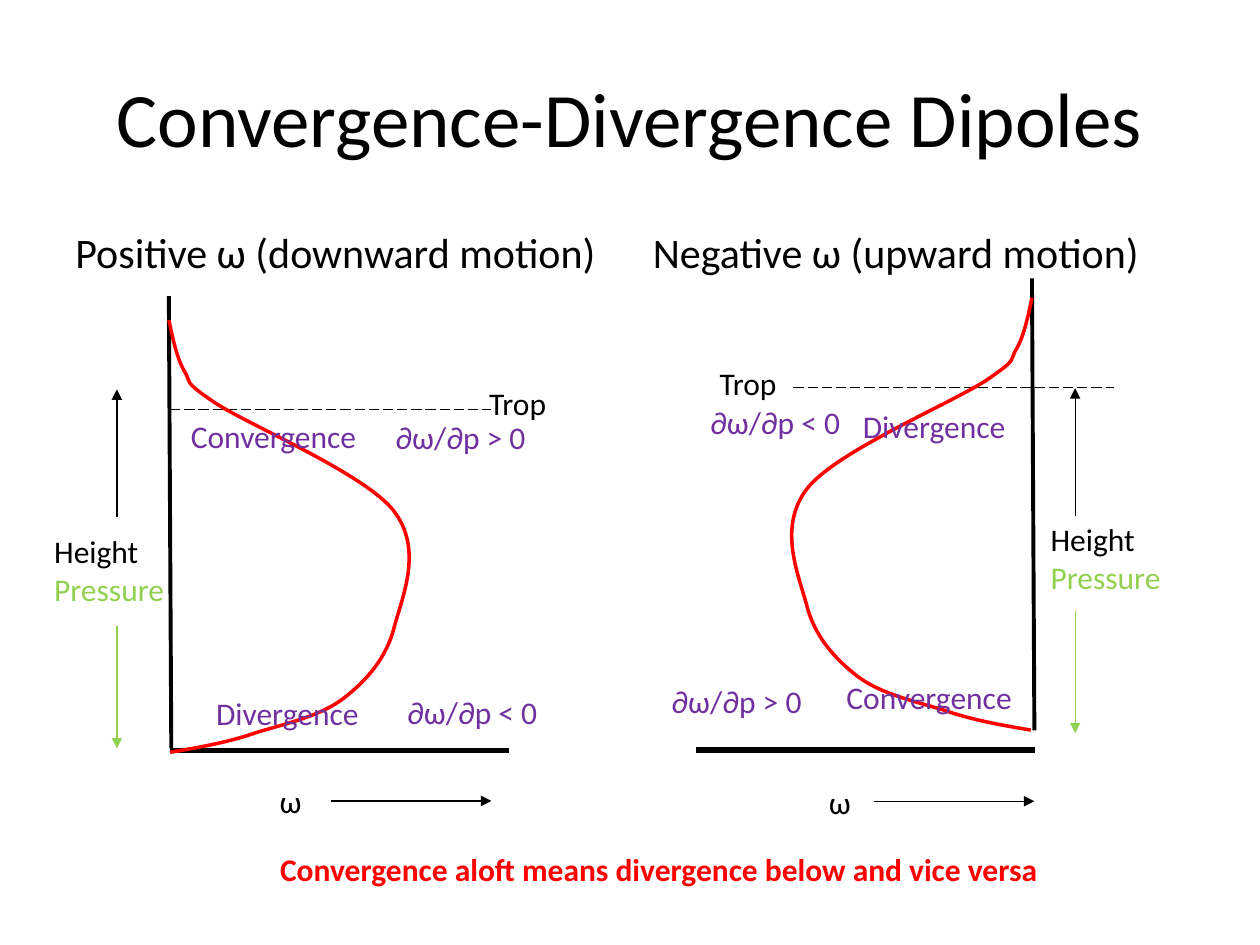
from lxml import etree
from pptx import Presentation
from pptx.dml.color import RGBColor
from pptx.enum.dml import MSO_LINE_DASH_STYLE as Dash
from pptx.enum.shapes import MSO_CONNECTOR as Connector
from pptx.enum.text import MSO_ANCHOR as Anchor, MSO_AUTO_SIZE as AutoSize, PP_ALIGN as Align
from pptx.oxml.ns import qn
from pptx.util import Pt

COLORS = {"ink": "000000", "profile": "FF0000", "pressure": "92D050", "term": "7030A0"}

# Bezier start and control points: distance from the height axis, depth below the top
OMEGA_PROFILE = [
    (0.7, 247),
    (18, 244.1), (34.6, 241.2), (51.1, 235.4),
    (67.7, 230.4), (87.1, 226.1), (100.1, 216),
    (113, 205.9), (124.6, 193), (128.9, 175),
    (133.9, 157), (145.4, 130.3), (128.2, 108.7),
    (111.6, 87.8), (46.8, 60.5), (26.6, 47.5),
    (6.5, 33.8), (13.7, 36.7), (8.6, 28.8),
    (4.3, 20.9), (2.2, 10.1), (0, 0),
]
PROFILE_WIDTH, PROFILE_HEIGHT = 137.5, 247

# Lines run from x, y to x, y; a profile has axis x, top and the side it bulges to
DOWNWARD = {
    "heading": ("Positive ω (downward motion)", 36),
    "height_axis": (96.5, 169.2, 97.9, 427.7),
    "omega_axis": (97.2, 428.8, 290.9, 428.8),
    "tropopause": (97.2, 234, 280.8, 234),
    "profile": (96.5, 182.9, 1),
    "height_arrow": (66.8, 295.6, 66.8, 222.5),
    "pressure_arrow": (66.8, 357.8, 66.8, 427.7),
    "omega_arrow": (188.9, 457.7, 280.8, 457.7),
    "height_label": (23.9, 300.7),
    "plain_labels": [("Trop", 272.4, 216, 62.6), ("ω", 152.8, 443.1, 98.6)],
    "term_labels": [
        ("∂ω/∂p < 0", 225.6, 392.4, 109.4), ("∂ω/∂p > 0", 218.9, 235.4, 109.4),
        ("Convergence", 102, 234.7, 115.9), ("Divergence", 116.4, 393.1, 115.9),
    ],
}
UPWARD = {
    "heading": ("Negative ω (upward motion)", 366),
    "height_axis": (589.7, 159.1, 591.1, 417.4),
    "omega_axis": (397.7, 428.6, 591.4, 428.6),
    "tropopause": (453.4, 221.5, 636.5, 221.5),
    "profile": (589.7, 170.2, -1),
    "height_arrow": (614.4, 294.7, 614.4, 221.8),
    "pressure_arrow": (614.4, 349.4, 614.4, 419),
    "omega_arrow": (499.7, 457.9, 591.1, 457.9),
    "height_label": (593.3, 293.8),
    "plain_labels": [("Trop", 404.1, 204.5, 62.6), ("ω", 466.6, 443.8, 98.6)],
    "term_labels": [
        ("∂ω/∂p < 0", 398.7, 227, 109.4), ("∂ω/∂p > 0", 376.6, 385.9, 109.4),
        ("Convergence", 476.6, 383.8, 115.9), ("Divergence", 486, 229, 115.9),
    ],
}


def rgb(name):
    return RGBColor.from_string(COLORS[name])


def add_text(slide, box, lines, size=18, align=Align.LEFT, anchor=Anchor.TOP,
             bold=None, fit=AutoSize.SHAPE_TO_FIT_TEXT):
    """Put (text, color) lines in a box given as left, top, width, height."""
    frame = slide.shapes.add_textbox(*map(Pt, box)).text_frame
    frame.word_wrap = True
    frame.auto_size = fit
    frame.vertical_anchor = anchor
    for index, (text, color) in enumerate(lines):
        paragraph = frame.add_paragraph() if index else frame.paragraphs[0]
        paragraph.text = text
        paragraph.alignment = align
        font = paragraph.font
        font.name, font.size, font.bold = "Calibri", Pt(size), bold
        font.color.rgb = rgb(color)


def add_line(slide, ends, width=0.75, color="ink", dash=None, arrow=False):
    connector = slide.shapes.add_connector(Connector.STRAIGHT, *map(Pt, ends))
    line = connector.line
    line.width = Pt(width)
    line.color.rgb = rgb(color)
    if dash:
        line.dash_style = dash
    if arrow:
        etree.SubElement(line._get_or_add_ln(), qn("a:tailEnd"), type="triangle")
    etree.SubElement(connector._element.spPr, qn("a:effectLst"))


def add_profile(slide, axis_x, top, direction):
    """Draw the omega profile, bulging right (1) or left (-1) of its axis."""
    left = axis_x if direction > 0 else axis_x - PROFILE_WIDTH
    builder = slide.shapes.build_freeform(Pt(left), Pt(top))
    builder.add_line_segments([(Pt(left + PROFILE_WIDTH), Pt(top + PROFILE_HEIGHT))], close=False)
    profile = builder.convert_to_shape()
    profile.shadow.inherit = False
    profile.fill.background()
    profile.line.width = Pt(2)
    profile.line.color.rgb = rgb("profile")

    # Cubic curves take the place of the diagonal that sets the extent
    outline = next(profile._element.iter(qn("a:path")))
    for segment in list(outline):
        outline.remove(segment)
    for index, (distance, depth) in enumerate(OMEGA_PROFILE):
        if index == 0:
            segment = etree.SubElement(outline, qn("a:moveTo"))
        elif index % 3 == 1:
            segment = etree.SubElement(outline, qn("a:cubicBezTo"))
        x = distance if direction > 0 else PROFILE_WIDTH - distance
        etree.SubElement(segment, qn("a:pt"), x=str(int(Pt(x))), y=str(int(Pt(depth))))


def add_panel(slide, panel):
    add_line(slide, panel["height_axis"], width=2.25)
    add_line(slide, panel["omega_axis"], width=3)
    add_line(slide, panel["tropopause"], dash=Dash.LONG_DASH)
    add_profile(slide, *panel["profile"])
    add_text(slide, (*panel["height_label"], 105.8, 51),
             [("Height", "ink"), ("Pressure", "pressure")])
    add_line(slide, panel["height_arrow"], arrow=True)
    add_line(slide, panel["omega_arrow"], arrow=True)
    add_line(slide, panel["pressure_arrow"], color="pressure", arrow=True)
    for key, color in (("plain_labels", "ink"), ("term_labels", "term")):
        for text, x, y, width in panel[key]:
            add_text(slide, (x, y, width, 29), [(text, color)])


def main():
    deck = Presentation()
    deck.slide_width, deck.slide_height = Pt(720), Pt(540)
    slide = deck.slides.add_slide(deck.slide_layouts[6])
    add_text(slide, (36, 21.6, 648, 90), [("Convergence-Divergence Dipoles", "ink")],
             size=44, align=Align.CENTER, anchor=Anchor.MIDDLE, fit=AutoSize.NONE)
    panels = (DOWNWARD, UPWARD)
    for panel in panels:
        heading, left = panel["heading"]
        add_text(slide, (left, 126, 318, 356.4), [(heading, "ink")], size=24, fit=AutoSize.NONE)
    for panel in panels:
        add_panel(slide, panel)
    add_text(slide, (96.5, 482.4, 560.2, 29),
             [("Convergence aloft means divergence below and vice versa", "profile")],
             align=Align.CENTER, bold=True)
    deck.save("out.pptx")


if __name__ == "__main__":
    main()
